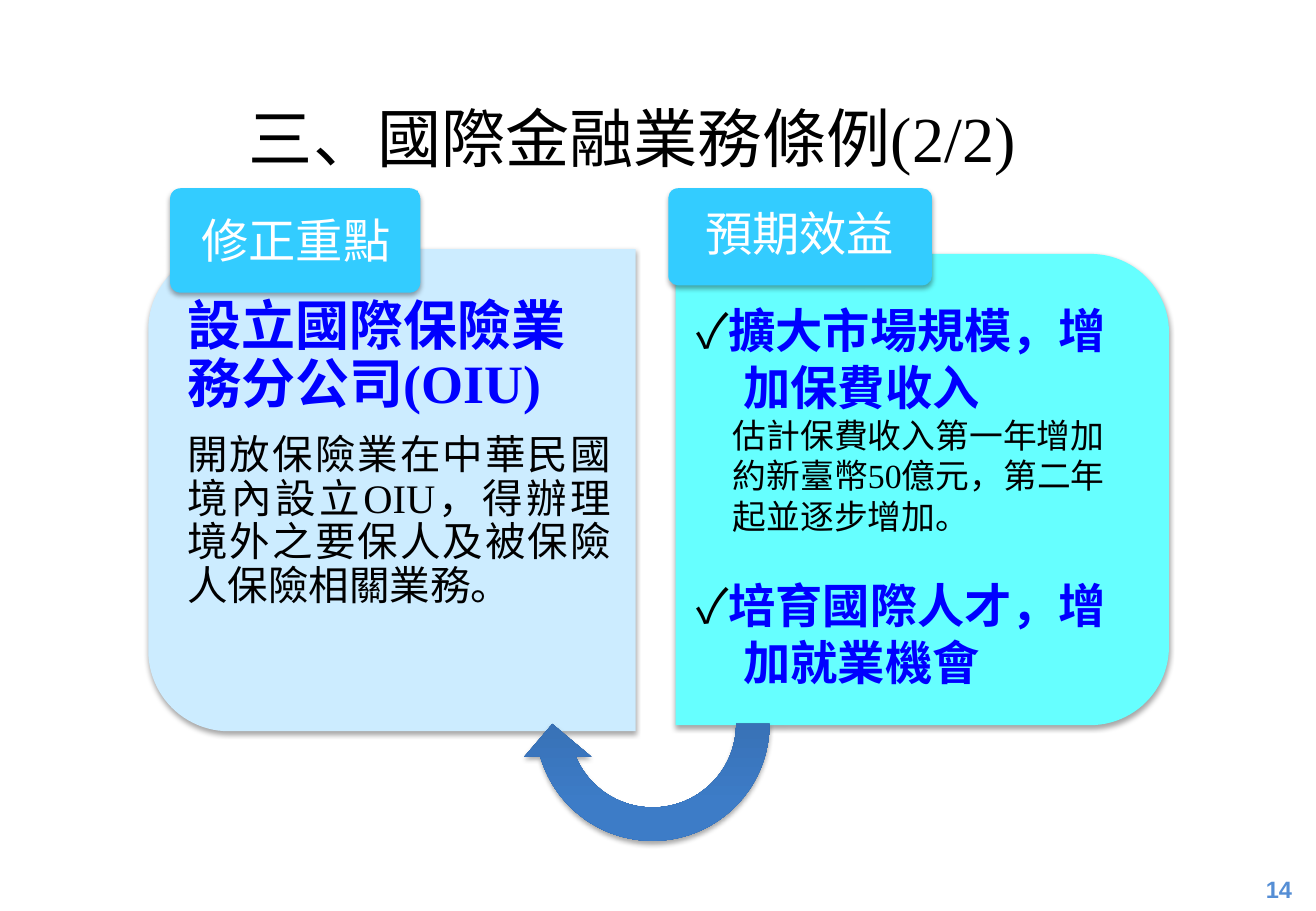
"""Slide on the amended international finance act: key change and expected benefits."""
from lxml import etree
from pptx import Presentation
from pptx.dml.color import RGBColor
from pptx.enum.shapes import MSO_SHAPE
from pptx.enum.text import MSO_ANCHOR, PP_ALIGN
from pptx.oxml.ns import qn
from pptx.util import Inches, Pt

ROUND_TOP, ROUND = MSO_SHAPE.ROUND_2_SAME_RECTANGLE, MSO_SHAPE.ROUNDED_RECTANGLE
RECT, ARROW = MSO_SHAPE.RECTANGLE, MSO_SHAPE.CIRCULAR_ARROW
MIDDLE, TOP = MSO_ANCHOR.MIDDLE, MSO_ANCHOR.TOP
LEFT, CENTER, JUSTIFY = PP_ALIGN.LEFT, PP_ALIGN.CENTER, PP_ALIGN.JUSTIFY
SERIF, SANS = "Times New Roman", "Arial"
COLORS = {"black": "000000", "white": "FFFFFF", "blue": "0000FF", "number": "558ED5",
          "pale": "CCECFF", "aqua": "66FFFF", "label": "33CCFF",
          "arrow_dark": "2F5F99", "arrow_light": "3D7CC7"}

prs = Presentation()
prs.slide_width, prs.slide_height = Inches(10.83), Inches(7.5)
s = prs.slides.add_slide(prs.slide_layouts[6])


def add_shape(kind, box, color, adj=(), rotation=0, shadow=True):
    sp = s.shapes.add_shape(kind, *map(Inches, box))
    sp.rotation = rotation
    for i, value in enumerate(adj):
        sp.adjustments[i] = value
    sp.fill.solid()
    sp.fill.fore_color.rgb = RGBColor.from_string(COLORS[color])
    sp.line.fill.background()
    sp.shadow.inherit = False
    if shadow:
        effects = sp._element.spPr.find(qn("a:effectLst"))
        outer = etree.SubElement(effects, qn("a:outerShdw"), blurRad=str(Pt(3.1)),
                                 dist=str(Pt(1.8)), dir="5400000", rotWithShape="0")
        clr = etree.SubElement(outer, qn("a:srgbClr"), val=COLORS["black"])
        etree.SubElement(clr, qn("a:alpha"), val="35000")
    return sp


def add_text(sp, paragraphs, insets=(0.1, 0.05, 0.1, 0.05), anchor=TOP, font=SERIF):
    tf = sp.text_frame
    tf.word_wrap = True
    tf.vertical_anchor = anchor
    tf.margin_left, tf.margin_top, tf.margin_right, tf.margin_bottom = map(Inches, insets)
    for i, (runs, align, spacing, after, before, margin, indent) in enumerate(paragraphs):
        p = tf.paragraphs[0] if i == 0 else tf.add_paragraph()
        p.alignment, p.line_spacing = align, spacing
        p.space_after, p.space_before = Pt(after), Pt(before)
        pPr = p._p.get_or_add_pPr()
        pPr.set("marL", str(Inches(margin)))
        pPr.set("indent", str(Inches(indent)))
        for text, size, color, bold in runs:
            r = p.add_run()
            r.text = text
            r.font.name, r.font.size, r.font.bold = font, Pt(size), bold
            r.font.color.rgb = RGBColor.from_string(COLORS[color])


number = s.shapes.add_textbox(*map(Inches, (10.22, 7.14, 0.61, 0.36)))
add_text(number, [([("14", 14, "number", True)], CENTER, 1.0, 0, 0, 0, 0)],
         anchor=MIDDLE, font=SANS)
title = s.shapes.add_textbox(*map(Inches, (1.95, 0.76, 6.93, 0.74)))
add_text(title, [([("三、國際金融業務條例(2/2)", 38, "black", False)], JUSTIFY, 1.0, 0, 0, 0, 0)])

add_shape(ROUND_TOP, (1.24, 2.03, 3.97, 4.01), "pale", (0.167, 0), 270)
change = s.shapes.add_textbox(*map(Inches, (1.41, 2.24, 3.82, 3.59)))
add_text(change, [
    ([("設立國際保險業務分公司(OIU)", 32, "blue", True)], LEFT, 0.9, 11.2, 0, 0, 0),
    ([("開放保險業在中華民國境內設立OIU，得辦理境外之要保人及被保險人保險相關業務。",
       24, "black", False)], JUSTIFY, 0.9, 8.4, 0, 0, 0),
], (0.13, 0.22, 0.2, 0.22))

add_shape(ROUND_TOP, (5.65, 2, 3.88, 4.06), "aqua", (0.167, 0), 90)
benefits = s.shapes.add_textbox(*map(Inches, (5.56, 2.29, 3.87, 3.5)))
check = ("✓", 28, "black", False)
add_text(benefits, [
    ([check, ("擴大市場規模，增加保費收入", 28, "blue", True)], LEFT, 1.0, 0, 0, 0.39, -0.39),
    ([("估計保費收入第一年增加約新臺幣50億元，第二年起並逐步增加。", 20, "black", False)],
     LEFT, 1.0, 0, 0, 0.3, 0),
    ([check, ("培育國際人才，增加就業機會", 28, "blue", True)], LEFT, 1.0, 0, 24, 0.39, -0.39),
], (0.17, 0.19, 0.12, 0.19))

arrow = add_shape(ARROW, (4.27, 4.86, 2.2, 2.2), "arrow_dark",
                  (0.125, 11.423, 204.577, 108, 0.125), 180)
arrow.fill.gradient()
arrow.fill.gradient_angle = 90
for stop, position, color in zip(arrow.fill.gradient_stops, (0, 0.8),
                                 ("arrow_dark", "arrow_light")):
    stop.position = position
    stop.color.rgb = RGBColor.from_string(COLORS[color])

for text, frame, inner, spacing, after in (
    ("修正重點", (1.4, 1.55, 2.06, 0.86), (1.43, 1.57, 2.01, 0.81), 1.0, 0),
    ("預期效益", (5.5, 1.55, 2.17, 0.8), (5.52, 1.57, 2.12, 0.75), 0.9, 9.8),
):
    add_shape(ROUND, frame, "label", (0.1,))
    label = add_shape(RECT, inner, "label", shadow=False)
    add_text(label, [([(text, 28, "white", False)], CENTER, spacing, after, 0, 0, 0)],
             (0.06, 0.04, 0.06, 0.04), MIDDLE)

prs.save("out.pptx")
